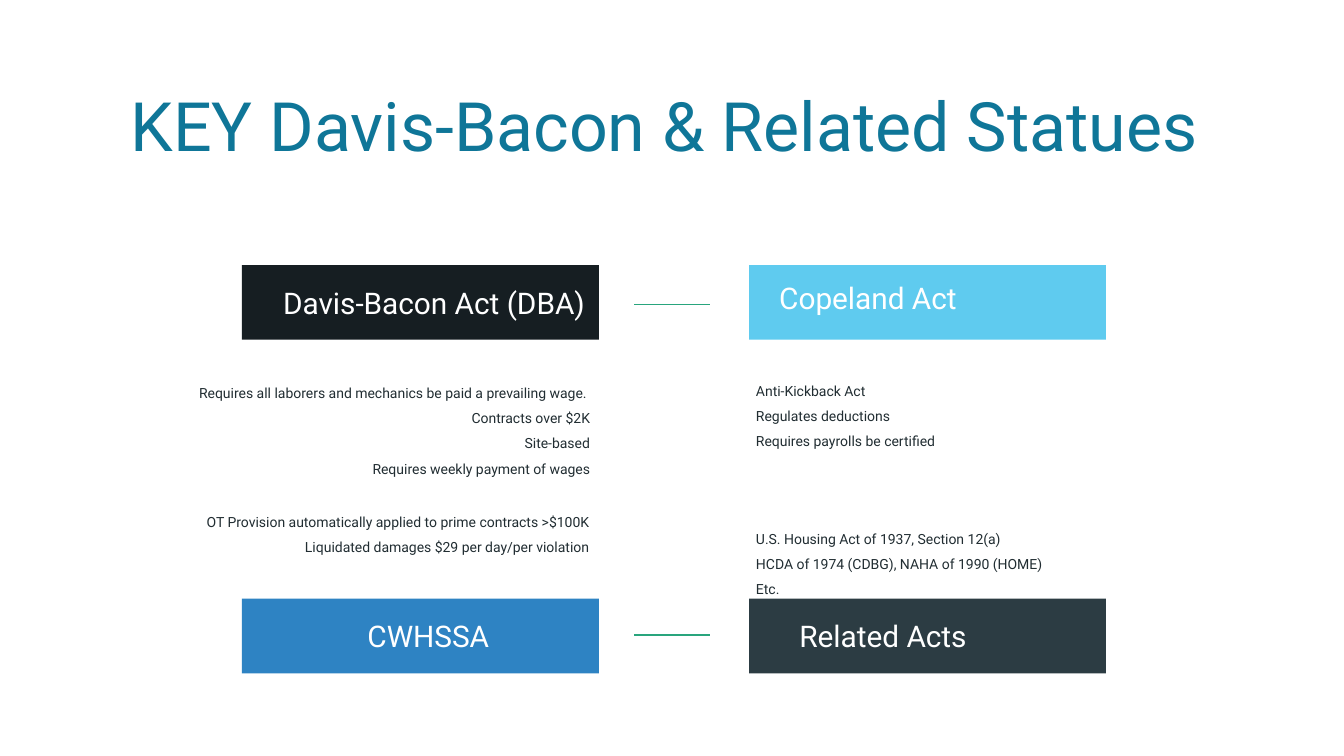
"""Build the slide on key Davis-Bacon statutes: four banners with their notes."""
from pptx import Presentation
from pptx.dml.color import RGBColor
from pptx.enum.shapes import MSO_CONNECTOR, MSO_SHAPE
from pptx.enum.text import MSO_ANCHOR, PP_ALIGN
from pptx.oxml.ns import qn
from pptx.util import Inches, Pt
from lxml import etree

LEFT, RIGHT, CENTER = PP_ALIGN.LEFT, PP_ALIGN.RIGHT, PP_ALIGN.CENTER
TOP, MIDDLE = MSO_ANCHOR.TOP, MSO_ANCHOR.MIDDLE

THEME = {
    "font": "Roboto",
    "title": (48.6, "0F7698"),
    "heading": (21.3, "FFFFFF"),
    "body": (10, "212D32"),
    "rule": "29A57D",
}
TITLE = "KEY Davis-Bacon & Related Statues "
TITLE_BOX = (0.92, 0.73, 11.5, 1.25)
COLUMN_LEFT = {LEFT: 7.43, RIGHT: 2.4}
ROW_TOP = (2.63, 5.94)
BANNER_SIZE = (3.54, 0.74)
RULE_SPAN = (6.29, 7.04)
RULE_HEIGHTS = (3.02, 6.3)

ACTS = [
    {"heading": "Copeland Act", "row": 0, "align": LEFT, "fill": "5FCBEF",
     "heading_box": (7.63, 2.72, 2.48, 0.46), "notes_box": (7.4, 3.66, 3.57, 0.83),
     "notes": ["Anti-Kickback Act", "Regulates deductions",
               "Requires payrolls be certified"]},
    {"heading": "Davis-Bacon Act (DBA)", "row": 0, "align": RIGHT, "fill": "161E22",
     "heading_box": (2.16, 2.77, 3.74, 0.46), "notes_box": (1.15, 3.68, 4.8, 1.08),
     "notes": ["Requires all laborers and mechanics be paid a prevailing wage. ",
               "Contracts over $2K", "Site-based",
               "Requires weekly payment of wages"]},
    {"heading": "Related Acts", "row": 1, "align": LEFT, "fill": "2C3C43",
     "heading_box": (7.83, 6.08, 2.75, 0.46), "notes_box": (7.4, 5.13, 3.57, 1.08),
     "notes": ["U.S. Housing Act of 1937, Section 12(a)",
               "HCDA of 1974 (CDBG), NAHA of 1990 (HOME)", "Etc."]},
    {"heading": "CWHSSA", "row": 1, "align": RIGHT, "fill": "2E83C3",
     "heading_box": (3.1, 6.08, 1.85, 0.46), "notes_box": (1.5, 4.96, 4.44, 0.83),
     "notes": ["OT Provision automatically applied to prime contracts >$100K",
               "Liquidated damages $29 per day/per violation"]},
]


def add_text(page, place, lines, style, align, anchor=TOP, spacing=1, after=0, inset=0.05):
    """Add a text box with one paragraph for each line."""
    size, color = THEME[style]
    frame = page.shapes.add_textbox(*map(Inches, place)).text_frame
    frame.word_wrap = True
    frame.vertical_anchor = anchor
    frame.margin_top = Inches(inset)
    frame.text = "\n".join(lines)
    for para in frame.paragraphs:
        para.alignment = align
        para.line_spacing = spacing
        para.space_after = Pt(after)
        for span in para.runs:
            span.font.name = THEME["font"]
            span.font.size = Pt(size)
            span.font.color.rgb = RGBColor.from_string(color)


def add_act(page, act):
    """Add an act's banner, heading and notes."""
    place = (COLUMN_LEFT[act["align"]], ROW_TOP[act["row"]], *BANNER_SIZE)
    banner = page.shapes.add_shape(MSO_SHAPE.RECTANGLE, *map(Inches, place))
    banner.shadow.inherit = False
    banner.fill.solid()
    banner.fill.fore_color.rgb = RGBColor.from_string(act["fill"])
    banner.line.fill.background()
    add_text(page, act["heading_box"], [act["heading"]], "heading", act["align"],
             anchor=MIDDLE, after=2)
    add_text(page, act["notes_box"], act["notes"], "body", act["align"], spacing=1.5)


def add_rule(page, height):
    """Add a horizontal rule between the two columns."""
    start, end = map(Inches, RULE_SPAN)
    rule = page.shapes.add_connector(
        MSO_CONNECTOR.STRAIGHT, start, Inches(height), end, Inches(height))
    rule.line.color.rgb = RGBColor.from_string(THEME["rule"])
    rule.line.width = Pt(1)
    etree.SubElement(rule._element.spPr, qn("a:effectLst"))


def main():
    """Build and save the deck."""
    deck = Presentation()
    deck.slide_width, deck.slide_height = Inches(13.33), Inches(7.5)
    page = deck.slides.add_slide(deck.slide_layouts[6])
    add_text(page, TITLE_BOX, [TITLE], "title", CENTER, inset=0.1)
    for act in ACTS:
        add_act(page, act)
    for height in RULE_HEIGHTS:
        add_rule(page, height)
    deck.save("out.pptx")


if __name__ == "__main__":
    main()
